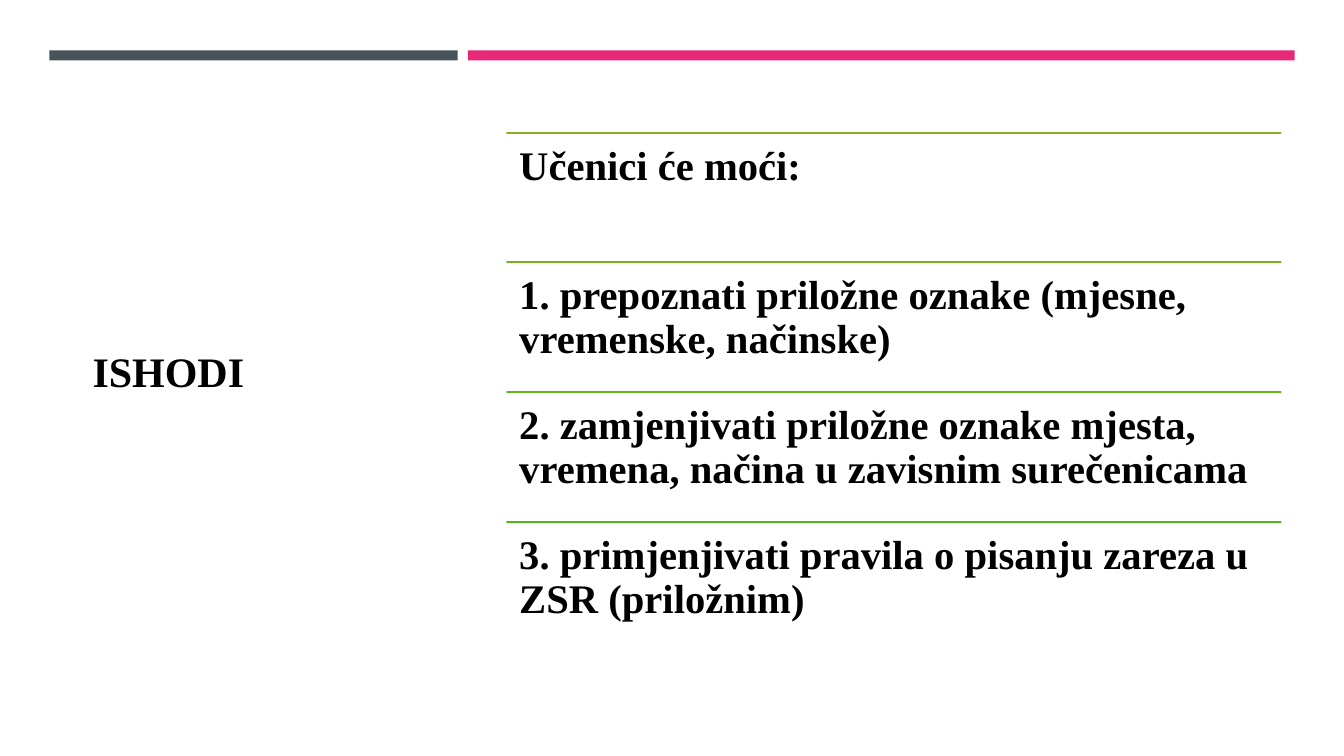
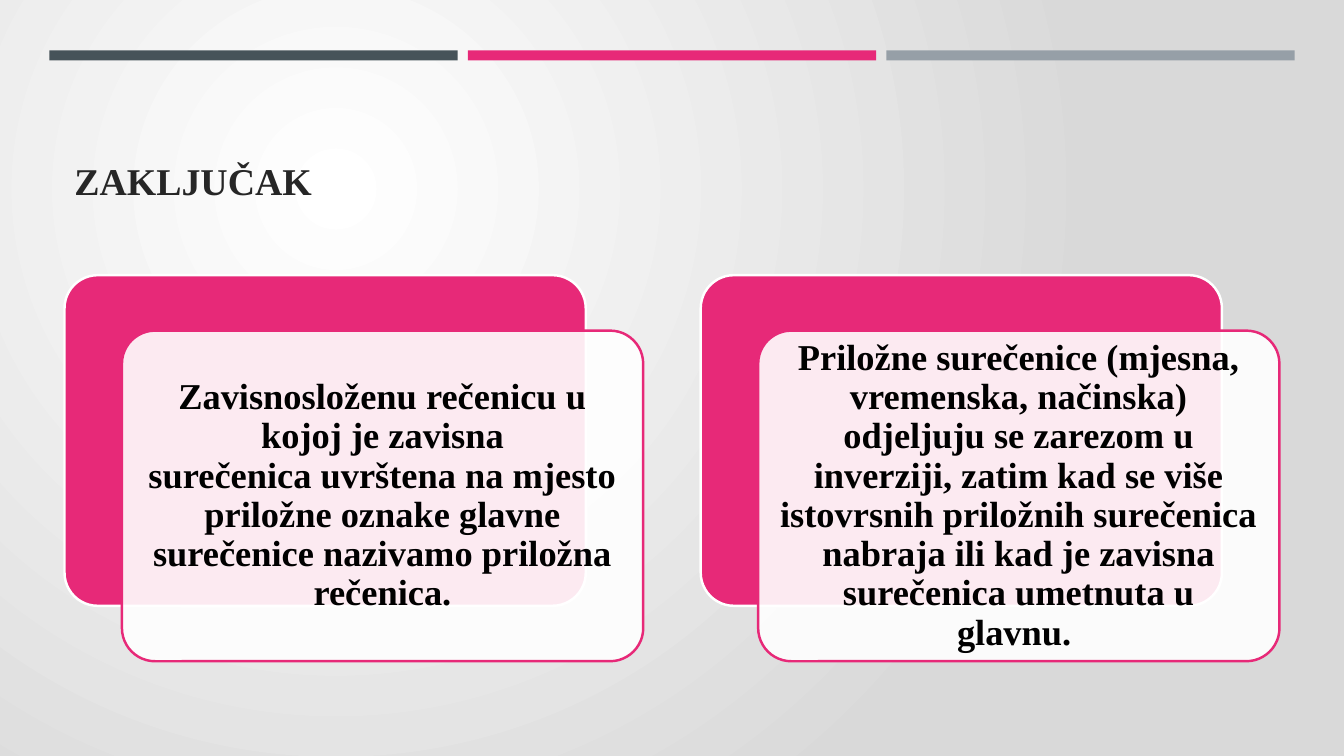
from dataclasses import dataclass
from typing import NamedTuple

from lxml.etree import SubElement
from pptx import Presentation
from pptx.dml.color import RGBColor as Color
from pptx.enum.shapes import MSO_CONNECTOR as Connector, MSO_SHAPE as Preset
from pptx.enum.text import MSO_ANCHOR as Anchor, PP_ALIGN as Align
from pptx.oxml.ns import qn
from pptx.presentation import Presentation as Deck
from pptx.shapes.autoshape import Shape
from pptx.slide import Slide
from pptx.util import Emu, Pt

EMU_PER_PX = 9144  # 100 px to the inch
NBSP = chr(160)  # keeps two words on one line


@dataclass(frozen=True)
class Theme:
    font: str = "Times New Roman"
    white: str = "FFFFFF"
    black: str = "000000"
    heading: str = "262626"
    slate: str = "465359"
    pink: str = "E72978"
    steel: str = "969FA7"
    backdrop_edge: str = "D9D9D9"
    side_title_size: int = 30
    top_title_size: int = 27
    outcome_size: int = 29
    card_size: int = 26
    line_width: float = 1.75
    line_spacing: float = 0.9


class Box(NamedTuple):
    left: int
    top: int
    width: int
    height: int

    def moved(self, right: int = 0, down: int = 0) -> "Box":
        return self._replace(left=self.left + right, top=self.top + down)

    def shrunk(self, margin: int) -> "Box":
        return Box(self.left + margin, self.top + margin,
                   self.width - 2 * margin, self.height - 2 * margin)


class Band(NamedTuple):
    color: str
    columns: int = 1


class Outcome(NamedTuple):
    text: str
    rule_color: str


THEME = Theme()
SLIDE_WIDTH, SLIDE_HEIGHT = 1333, 750
BAND, BAND_GAP = Box(49, 50, 405, 10), 10
OUTCOME_LIST = Box(503, 132, 767, 515)
CARD, CARD_PITCH = Box(64, 273, 517, 328), 631
CARD_SHIFT_RIGHT, CARD_SHIFT_DOWN = 57, 55

OUTCOMES = [
    Outcome("Učenici će moći:", "8BB01F"),
    Outcome("1. prepoznati priložne oznake (mjesne, vremenske, načinske)", "77B31B"),
    Outcome(f"2. zamjenjivati priložne oznake{NBSP}mjesta, vremena, načina u zavisnim "
            "surečenicama", "62B618"),
    Outcome("3. primjenjivati pravila o pisanju zareza u ZSR (priložnim)", "4BB914"),
]
CONCLUSIONS = [
    f"Zavisnosloženu rečenicu u kojoj{NBSP}je{NBSP}zavisna surečenica{NBSP}uvrštena "
    "na mjesto priložne oznake glavne surečenice nazivamo priložna rečenica.",
    f"Priložne{NBSP}surečenice (mjesna, vremenska, načinska) odjeljuju se zarezom u "
    "inverziji, zatim kad se više istovrsnih priložnih surečenica nabraja ili kad "
    f"je zavisna surečenica umetnuta u glavnu.{NBSP}",
]


def px(length: int) -> Emu:
    return Emu(length * EMU_PER_PX)


def rgb(color: str) -> Color:
    return Color.from_string(color)


def add_text(slide: Slide, box: Box, text: str, *, size: int,
             color: str = THEME.black, anchor: Anchor = Anchor.TOP,
             align: Align = Align.LEFT, inset_x: int = 10, inset_y: int = 5) -> None:
    frame = slide.shapes.add_textbox(*map(px, box)).text_frame
    frame.word_wrap = True
    frame.vertical_anchor = anchor
    frame.margin_left = frame.margin_right = px(inset_x)
    frame.margin_top = frame.margin_bottom = px(inset_y)
    paragraph = frame.paragraphs[0]
    paragraph.alignment = align
    paragraph.line_spacing = THEME.line_spacing
    run = paragraph.add_run()
    run.text = text
    run.font.name = THEME.font
    run.font.size = Pt(size)
    run.font.bold = True
    run.font.color.rgb = rgb(color)


def add_block(slide: Slide, box: Box, fill: str, *, preset: Preset = Preset.RECTANGLE,
              line: str | None = None) -> Shape:
    shape = slide.shapes.add_shape(preset, *map(px, box))
    shape.shadow.inherit = False
    shape.fill.solid()
    shape.fill.fore_color.rgb = rgb(fill)
    if line:
        shape.line.color.rgb = rgb(line)
        shape.line.width = Pt(THEME.line_width)
    else:
        shape.line.fill.background()
    return shape


def add_rounded(slide: Slide, box: Box, fill: str, line: str) -> Shape:
    shape = add_block(slide, box, fill, preset=Preset.ROUNDED_RECTANGLE, line=line)
    shape.adjustments[0] = 0.1
    return shape


def set_opacity(shape: Shape, percent: int) -> None:
    color = shape.fill._xPr.find(qn("a:solidFill"))[0]
    SubElement(color, qn("a:alpha"), val=str(percent * 1000))


def add_rule(slide: Slide, left: int, top: int, width: int, color: str) -> None:
    rule = slide.shapes.add_connector(
        Connector.STRAIGHT, px(left), px(top), px(left + width), px(top))
    rule.line.color.rgb = rgb(color)
    rule.line.width = Pt(THEME.line_width)
    properties = rule._element.spPr
    properties.find(qn("a:ln")).set("cap", "rnd")
    SubElement(properties, qn("a:effectLst"))


def add_bands(slide: Slide, bands: list[Band]) -> None:
    left = BAND.left
    for band in bands:
        width = band.columns * (BAND.width + BAND_GAP) - BAND_GAP
        add_block(slide, BAND._replace(left=left, width=width), band.color)
        left += width + BAND_GAP


def set_radial_background(slide: Slide, center: str, edge: str) -> None:
    fill = slide.background.fill
    fill.gradient()
    for stop, color, position in zip(fill.gradient_stops, (center, edge), (0, 1)):
        stop.color.rgb = rgb(color)
        stop.position = position
    gradient = next(slide._element.iter(qn("a:gradFill")))
    gradient.remove(gradient.find(qn("a:lin")))
    circle = SubElement(gradient, qn("a:path"), path="circle")
    SubElement(circle, qn("a:fillToRect"), l="50000", t="50000", r="100000", b="100000")


def add_blank_slide(presentation: Deck) -> Slide:
    return presentation.slides.add_slide(presentation.slide_layouts[6])


def build_outcomes(presentation: Deck) -> None:
    slide = add_blank_slide(presentation)
    slide.background.fill.solid()
    slide.background.fill.fore_color.rgb = rgb(THEME.white)
    add_block(slide, Box(0, 0, SLIDE_WIDTH, SLIDE_HEIGHT), THEME.white)
    add_text(slide, Box(82, 114, 334, 514), "ISHODI",
             size=THEME.side_title_size, anchor=Anchor.MIDDLE)
    add_bands(slide, [Band(THEME.slate), Band(THEME.pink, columns=2)])
    # Ruled list of outcomes in equal rows
    row_height = OUTCOME_LIST.height / len(OUTCOMES)
    for index, outcome in enumerate(OUTCOMES):
        row = OUTCOME_LIST.moved(down=int(index * row_height))
        row = row._replace(height=round(row_height))
        add_rule(slide, row.left, row.top, row.width, outcome.rule_color)
        add_text(slide, row, outcome.text, size=THEME.outcome_size,
                 inset_x=12, inset_y=12)


def build_conclusion(presentation: Deck) -> None:
    slide = add_blank_slide(presentation)
    set_radial_background(slide, THEME.white, THEME.backdrop_edge)
    add_bands(slide, [Band(THEME.slate), Band(THEME.pink), Band(THEME.steel)])
    add_text(slide, Box(64, 77, 1206, 130), "ZAKLJUČAK", size=THEME.top_title_size,
             color=THEME.heading, anchor=Anchor.BOTTOM)
    # Pink cards, each with a translucent text panel in front
    for index, text in enumerate(CONCLUSIONS):
        card = CARD.moved(right=index * CARD_PITCH)
        panel = card.moved(CARD_SHIFT_RIGHT, CARD_SHIFT_DOWN)
        add_rounded(slide, card, THEME.pink, THEME.white)
        set_opacity(add_rounded(slide, panel, THEME.white, THEME.pink), 90)
        add_text(slide, panel.shrunk(10), text, size=THEME.card_size,
                 anchor=Anchor.MIDDLE, align=Align.CENTER, inset_x=11, inset_y=11)


def main() -> None:
    presentation = Presentation()
    presentation.slide_width = px(SLIDE_WIDTH)
    presentation.slide_height = px(SLIDE_HEIGHT)
    build_outcomes(presentation)
    build_conclusion(presentation)
    presentation.save("out.pptx")


if __name__ == "__main__":
    main()
